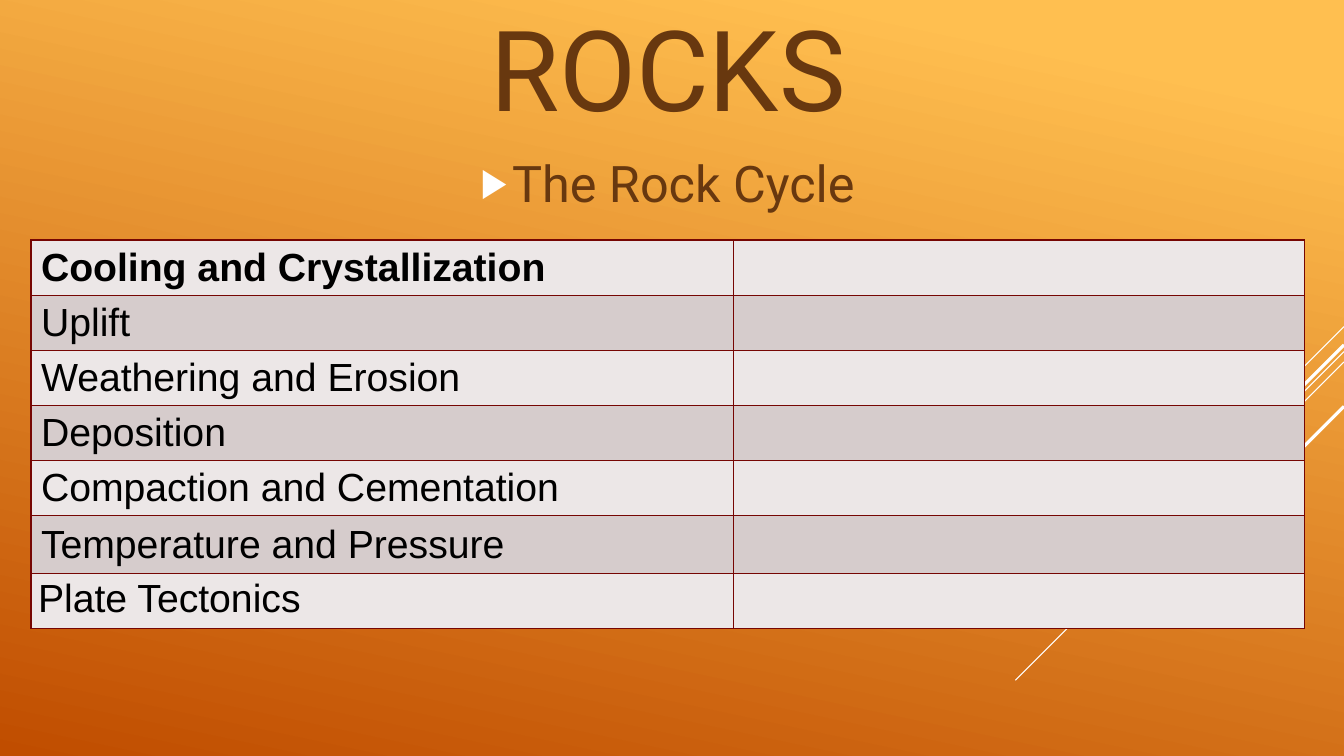
import pptx
import pptx.dml.color
import pptx.enum.text
import pptx.oxml.ns
import pptx.util
from lxml import etree
from pptx.util import Cm

COLORS = {
    "sky": "FFBF50",
    "ember": "C04D00",
    "heading": "68380F",
    "white": "FFFFFF",
    "black": "000000",
    "border": "760603",
    "light_row": "ECE7E7",
    "dark_row": "D6CCCC",
}
SLIDE_WIDTH, SLIDE_HEIGHT = Cm(33.87), Cm(19.05)
PROCESSES = [
    "Cooling and Crystallization",
    "Uplift",
    "Weathering and Erosion",
    "Deposition",
    "Compaction and Cementation",
    "Temperature and Pressure",
    "Plate Tectonics",
]
# Diagonal streaks from the right edge: start height (cm), run (cm), width (pt)
STREAKS = [
    (8.23, 2.54, 0.75),
    (8.86, 8.28, 0.75),
    (9.12, 5.26, 0.75),
    (8.69, 4.85, 2.25),
    (10.24, 3.53, 2.25),
]


def rgb(name):
    return pptx.dml.color.RGBColor.from_string(COLORS[name])


def add_xml(parent, tag, **attributes):
    return etree.SubElement(parent, pptx.oxml.ns.qn(tag), attributes)


def add_run(paragraph, text, font, size, color, bold=False):
    run = paragraph.add_run()
    run.text = text
    run.font.name = font
    run.font.size = pptx.util.Pt(size)
    run.font.bold = bold
    run.font.color.rgb = rgb(color)


def paint_background(slide):
    fill = slide.background.fill
    fill.gradient()
    fill.gradient_angle = 258
    for stop, position, color in zip(fill.gradient_stops, (0.1, 1), ("sky", "ember")):
        stop.position = position
        stop.color.rgb = rgb(color)


def add_streak(slide, top, run, width):
    streak = slide.shapes.add_connector(
        pptx.enum.shapes.MSO_CONNECTOR.STRAIGHT,
        SLIDE_WIDTH, Cm(top), SLIDE_WIDTH - Cm(run), Cm(top + run))
    streak.line.color.rgb = rgb("white")
    streak.line.width = pptx.util.Pt(width)
    add_xml(streak._element.spPr, "a:effectLst")


def fill_placeholder(holder, box, text, size, anchor):
    holder.left, holder.top, holder.width, holder.height = map(Cm, box)
    frame = holder.text_frame
    frame.word_wrap = True
    frame.auto_size = pptx.enum.text.MSO_AUTO_SIZE.NONE
    frame.vertical_anchor = anchor
    paragraph = frame.paragraphs[0]
    paragraph.alignment = pptx.enum.text.PP_ALIGN.CENTER
    paragraph.space_before = pptx.util.Pt(0)
    add_run(paragraph, text, "Roboto", size, "heading")
    return paragraph


def add_arrow_bullet(paragraph):
    properties = paragraph._p.get_or_add_pPr()
    properties.set("marL", str(Cm(0.79)))
    properties.set("indent", str(-Cm(0.79)))
    bullet_color = add_xml(properties, "a:buClr")
    add_xml(bullet_color, "a:srgbClr", val=COLORS["white"])
    add_xml(properties, "a:buSzPct", val="80000")
    add_xml(properties, "a:buFont", typeface="Arial")
    add_xml(properties, "a:buChar", char="▶")
    paragraph.space_after = pptx.util.Pt(6)


def style_cell(cell, color):
    cell.fill.solid()
    cell.fill.fore_color.rgb = rgb(color)
    properties = cell._tc.get_or_add_tcPr()
    for index, side in enumerate(("a:lnL", "a:lnR", "a:lnT", "a:lnB")):
        border = add_xml(properties, side, w=str(pptx.util.Pt(1)))
        line_fill = add_xml(border, "a:solidFill")
        add_xml(line_fill, "a:srgbClr", val=COLORS["border"])
        properties.insert(index, border)


def add_process_table(slide):
    table = slide.shapes.add_table(
        len(PROCESSES), 2, Cm(0.78), Cm(6.05), Cm(32.1), Cm(9.8)).table
    table.first_row = table.horz_banding = False
    table.columns[0].width, table.columns[1].width = Cm(17.7), Cm(14.4)
    for index, process in enumerate(PROCESSES):
        row = table.rows[index]
        row.height = Cm(1.46 if process == "Temperature and Pressure" else 1.39)
        for cell in row.cells:
            style_cell(cell, "dark_row" if index % 2 else "light_row")
        label = row.cells[0]
        label.vertical_anchor = pptx.enum.text.MSO_ANCHOR.MIDDLE
        add_run(label.text_frame.paragraphs[0], process, "Arial", 28, "black",
                bold=index == 0)

    # The last label sits tight to the top of its cell
    label.vertical_anchor = pptx.enum.text.MSO_ANCHOR.TOP
    label.margin_left = label.margin_right = Cm(0.18)
    label.margin_top = label.margin_bottom = Cm(0)
    label.text_frame.paragraphs[0].line_spacing = 1.07


def main():
    deck = pptx.Presentation()
    deck.slide_width, deck.slide_height = SLIDE_WIDTH, SLIDE_HEIGHT
    slide = deck.slides.add_slide(deck.slide_layouts[1])

    # Backdrop
    paint_background(slide)
    for streak in STREAKS:
        add_streak(slide, *streak)

    # Heading and topic
    fill_placeholder(slide.shapes.title, (1.37, 0.81, 30.94, 1.73), "ROCKS", 80,
                     pptx.enum.text.MSO_ANCHOR.MIDDLE)
    topic = fill_placeholder(slide.placeholders[1], (0.78, 3.71, 32.1, 14.48),
                             "The Rock Cycle", 36, pptx.enum.text.MSO_ANCHOR.TOP)
    add_arrow_bullet(topic)

    # Processes of the cycle
    add_process_table(slide)
    deck.save("out.pptx")


if __name__ == "__main__":
    main()
